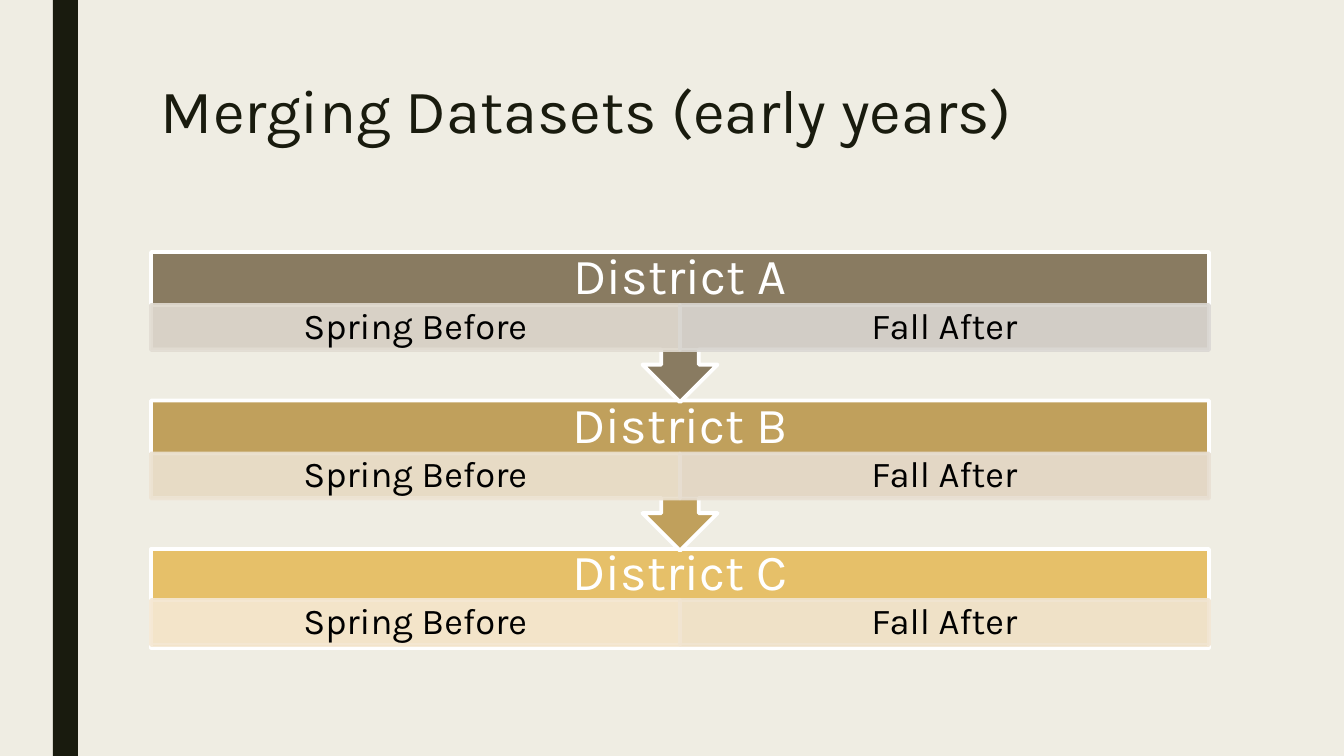
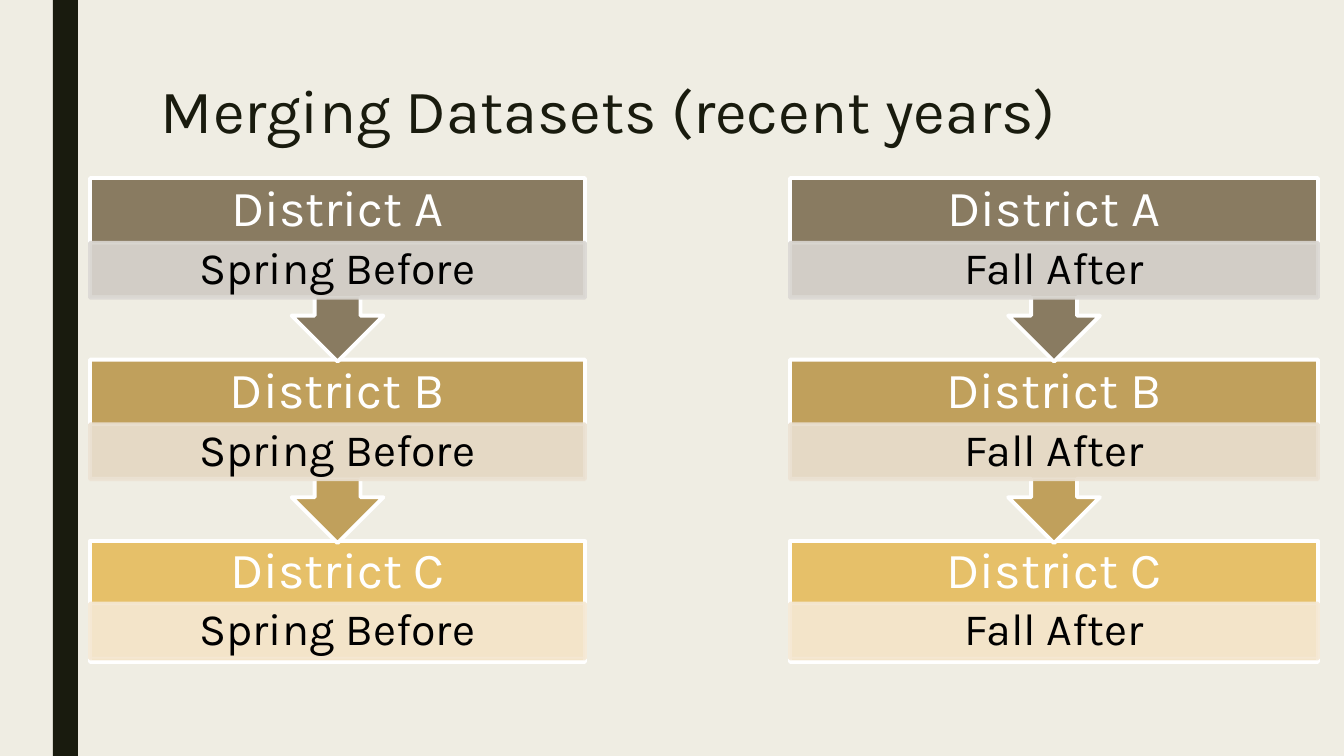
import dataclasses

import lxml.etree
import pptx
import pptx.dml.color
import pptx.enum.shapes
import pptx.enum.text
import pptx.oxml.ns
import pptx.util

SLIDE_WIDTH, SLIDE_HEIGHT = 1344, 756
EMU_PER_PX = 12192000 / SLIDE_WIDTH


@dataclasses.dataclass(frozen=True)
class Theme:
    """Colours, font and type sizes of the presentation."""

    font: str = "Karla"
    background: str = "EFEDE3"
    dark: str = "191B0E"
    white: str = "FFFFFF"
    black: str = "000000"
    districts: tuple = ("897B61", "C0A05C", "E6C069")
    single_tints: tuple = (("DAD7D2",), ("EAE0D1",), ("F5E8D4",))
    paired_tints: tuple = (("E1DBD1", "DAD7D2"), ("ECE2D1", "E7DED1"), ("F5E8D4", "F1E5D2"))
    title_size: int = 44
    district_size: int = 36
    paired_size: int = 26
    single_size: int = 32
    outline: float = 2.75
    tint_opacity: int = 90


THEME = Theme()
SHAPES = pptx.enum.shapes.MSO_SHAPE
ALIGN = pptx.enum.text.PP_ALIGN
ANCHOR = pptx.enum.text.MSO_ANCHOR
DISTRICTS = ("District A", "District B", "District C")


def to_emu(box):
    """Turn the px lengths of a box into EMU."""
    return [pptx.util.Emu(round(length * EMU_PER_PX)) for length in box]


def rgb(value):
    """Return the colour of a hex value."""
    return pptx.dml.color.RGBColor.from_string(value)


def write_text(shape, text, size, color, align=ALIGN.CENTER, anchor=ANCHOR.MIDDLE,
               spacing=0.9, margins=(0, 0)):
    """Put one formatted paragraph into a shape."""
    frame = shape.text_frame
    frame.word_wrap = True
    frame.vertical_anchor = anchor
    horizontal, vertical = to_emu(margins)
    frame.margin_left = frame.margin_right = horizontal
    frame.margin_top = frame.margin_bottom = vertical
    paragraph = frame.paragraphs[0]
    paragraph.alignment = align
    paragraph.line_spacing = spacing
    run = paragraph.add_run()
    run.text = text
    run.font.name = THEME.font
    run.font.size = pptx.util.Pt(size)
    run.font.color.rgb = rgb(color)


def add_text(slide, box, text, **text_format):
    """Add a text box with formatted text."""
    shape = slide.shapes.add_textbox(*to_emu(box))
    write_text(shape, text, **text_format)


def add_block(slide, kind, box, fill, line=None, opacity=100):
    """Add a filled preset shape, with an outline if a line colour is given."""
    shape = slide.shapes.add_shape(kind, *to_emu(box))
    shape.shadow.inherit = False
    shape.fill.solid()
    shape.fill.fore_color.rgb = rgb(fill)
    if line:
        shape.line.color.rgb = rgb(line)
        shape.line.width = pptx.util.Pt(THEME.outline)
    else:
        shape.line.fill.background()
    if opacity < 100:
        for color in shape.element.spPr.iter(pptx.oxml.ns.qn("a:srgbClr")):
            alpha = lxml.etree.SubElement(color, pptx.oxml.ns.qn("a:alpha"))
            alpha.set("val", str(opacity * 1000))
    return shape


def add_base_slide(presentation, title):
    """Add a slide with the background, side band and title."""
    slide = presentation.slides.add_slide(presentation.slide_layouts[6])
    slide.background.fill.solid()
    slide.background.fill.fore_color.rgb = rgb(THEME.background)
    add_block(slide, SHAPES.RECTANGLE, (53, 0, 25, SLIDE_HEIGHT), THEME.dark)
    add_text(slide, (151, 76, 1058, 87), title, size=THEME.title_size, color=THEME.dark,
             align=ALIGN.LEFT, anchor=ANCHOR.TOP, spacing=0.89, margins=(10, 5))
    return slide


def add_district(slide, box, name, color, seasons, tints, size, season_box, arrow):
    """Add a district header above equal season cells, with an arrow below if wanted."""
    left, top, width, _ = box
    season_top, season_height = season_box
    kind = SHAPES.UP_ARROW_CALLOUT if arrow else SHAPES.RECTANGLE
    block = add_block(slide, kind, box, color, THEME.white)
    if arrow:
        block.rotation = 180
    add_text(slide, (left, top, width, season_top), name,
             size=THEME.district_size, color=THEME.white)
    cell_width = width / len(seasons)
    for index, (season, tint) in enumerate(zip(seasons, tints)):
        cell_box = (left + index * cell_width, top + season_top, cell_width, season_height)
        cell = add_block(slide, SHAPES.RECTANGLE, cell_box, tint, tint, THEME.tint_opacity)
        write_text(cell, season, size=size, color=THEME.black, margins=(20, 4))


def add_district_stack(slide, box, seasons, tints, size):
    """Fill a box with the districts, drawn from the last one up."""
    left, top, width, height = box
    last = len(DISTRICTS) - 1
    for index in range(last, -1, -1):
        arrow = index < last
        district_height = height * (0.38 if arrow else 0.25)
        season_top = height * (0.134 if arrow else 0.129)
        district_box = (left, top + index * height * 0.376, width, district_height)
        add_district(slide, district_box, DISTRICTS[index], THEME.districts[index], seasons,
                     tints[index], size, (season_top, height * 0.114), arrow)


def add_early_years(presentation):
    """Add the slide with both seasons in one stack."""
    slide = add_base_slide(presentation, "Merging Datasets (early years)")
    add_district_stack(slide, (151, 252, 1058, 395), ("Spring Before", "Fall After"),
                       THEME.paired_tints, THEME.paired_size)


def add_recent_years(presentation):
    """Add the slide with one stack for each season."""
    slide = add_base_slide(presentation, "Merging Datasets (recent years)")
    for season, left, width in (("Spring Before", 90, 495), ("Fall After", 790, 528)):
        add_district_stack(slide, (left, 178, width, 483), (season,),
                           THEME.single_tints, THEME.single_size)


def main():
    """Build and save the presentation."""
    presentation = pptx.Presentation()
    presentation.slide_width, presentation.slide_height = to_emu((SLIDE_WIDTH, SLIDE_HEIGHT))
    add_early_years(presentation)
    add_recent_years(presentation)
    presentation.save("out.pptx")


if __name__ == "__main__":
    main()
